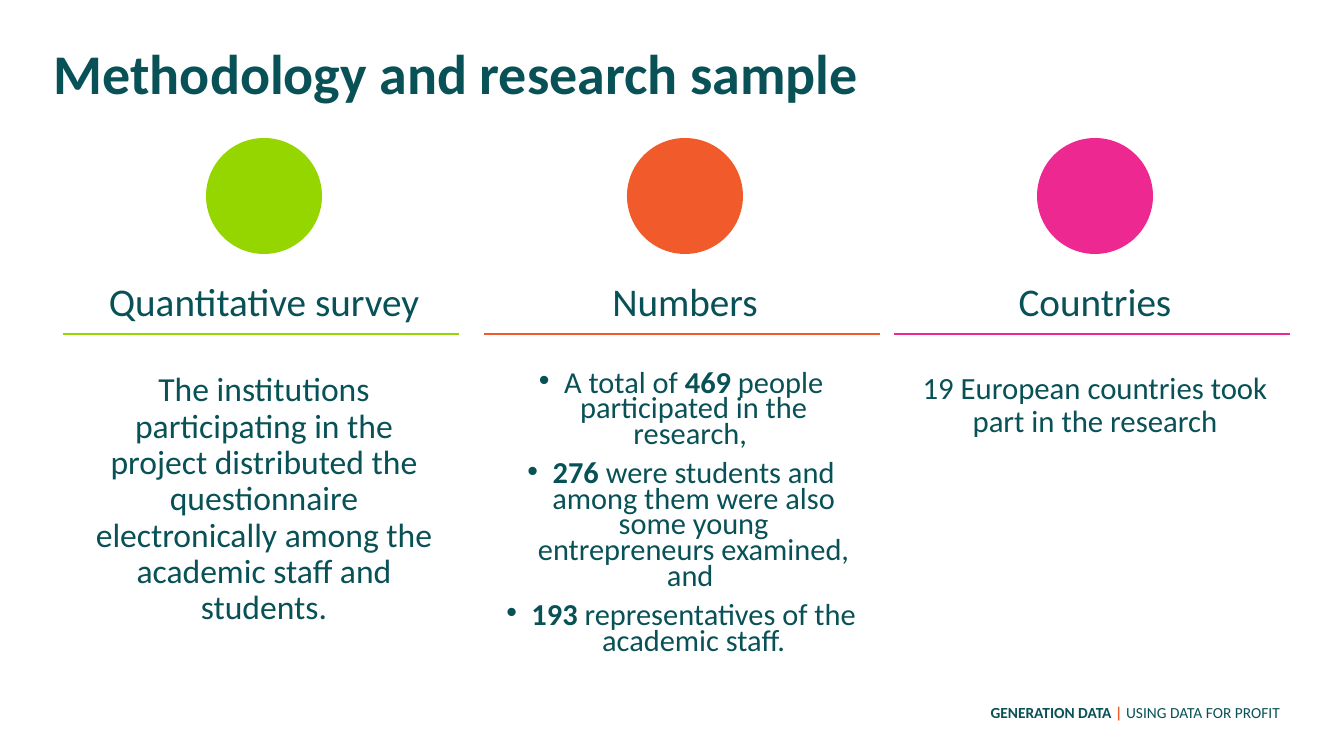
import pptx
import pptx.util
import pptx.dml.color
import pptx.enum.shapes
import pptx.enum.text
import pptx.oxml.ns
import lxml.etree

PX = 914400 / 100.8
TEAL, ORANGE = "085156", "F15A2A"
ALIGN = pptx.enum.text.PP_ALIGN
ANCHOR = pptx.enum.text.MSO_ANCHOR


def px(*lengths):
    return [round(length * PX) for length in lengths]


def rgb(value):
    return pptx.dml.color.RGBColor.from_string(value)


deck = pptx.Presentation()
deck.slide_width, deck.slide_height = px(1344, 756)
page = deck.slides.add_slide(deck.slide_layouts[6])

# Columns: left edge, colour, heading, body left edge, body height, size, line spacing, paragraphs
# Each paragraph is a list of (wording, bold) spans
columns = [
    (76, "95D600", "Quantitative survey", 76, 297, 24, 0.9, [
        [("The institutions participating in the project distributed the "
          "questionnaire electronically among the academic staff and students.", False)]]),
    (497, ORANGE, "Numbers", 493, 318, 21.7, 0.7, [
        [("A total of ", False), ("469", True), (" people participated in the research, ", False)],
        [("276", True), (" were students and among them were also some young "
                         "entrepreneurs examined, and ", False)],
        [("193 ", True), ("representatives of the academic staff.", False)]]),
    (907, "ED2891", "Countries", 907, 296, 22, 0.9, [
        [("19 European countries took part in the research", False)]]),
]

# Text boxes: place, size, line spacing, alignment, anchor, paragraphs
texts = [
    ((44, 38, 1250, 77), 40, 0.9, ALIGN.LEFT, ANCHOR.MIDDLE,
     [[("Methodology and research sample", True)]]),
    ((73, 698, 1217, 45), 11, 1.0, ALIGN.RIGHT, ANCHOR.TOP,
     [[("GENERATION DATA ", True), ("| ", True), ("USING DATA FOR PROFIT", False)]]),
]

# Circle and rule of each column
for left, colour, heading, body_left, body_height, size, spacing, paragraphs in columns:
    circle = page.shapes.add_shape(
        pptx.enum.shapes.MSO_SHAPE.OVAL, *px(left + 130, 138, 116, 116))
    circle.shadow.inherit = False
    circle.fill.solid()
    circle.fill.fore_color.rgb = rgb(colour)
    circle.line.fill.background()

    rule = page.shapes.add_connector(
        pptx.enum.shapes.MSO_CONNECTOR.STRAIGHT, *px(left - 13, 334, left + 383, 334))
    rule.line.color.rgb = rgb(colour)
    rule.line.width = pptx.util.Pt(1)
    lxml.etree.SubElement(rule._element.spPr, pptx.oxml.ns.qn("a:effectLst"))

    texts.append(((left, 278, 376, 115), 28, 0.9, ALIGN.CENTER, ANCHOR.TOP, [[(heading, False)]]))
    texts.append(((body_left, 368, 376, body_height), size, spacing,
                  ALIGN.CENTER, ANCHOR.TOP, paragraphs))

# Title, footer, headings and bodies
for place, size, spacing, alignment, anchor, paragraphs in texts:
    frame = page.shapes.add_textbox(*px(*place)).text_frame
    frame.word_wrap = True
    frame.vertical_anchor = anchor
    for index, spans in enumerate(paragraphs):
        para = frame.add_paragraph() if index else frame.paragraphs[0]
        para.alignment = alignment
        para.line_spacing = spacing
        if index:
            para.space_before = pptx.util.Pt(10)
        if len(paragraphs) > 1:
            properties = para._p.get_or_add_pPr()
            properties.set("marL", "228600")
            properties.set("indent", "-228600")
            font = lxml.etree.SubElement(properties, pptx.oxml.ns.qn("a:buFont"))
            font.set("typeface", "Arial")
            bullet = lxml.etree.SubElement(properties, pptx.oxml.ns.qn("a:buChar"))
            bullet.set("char", "•")
        for wording, bold in spans:
            span = para.add_run()
            span.text = wording
            span.font.name = "Calibri"
            span.font.size = pptx.util.Pt(size)
            span.font.bold = bold
            span.font.color.rgb = rgb(ORANGE if wording == "| " else TEAL)

deck.save("out.pptx")
